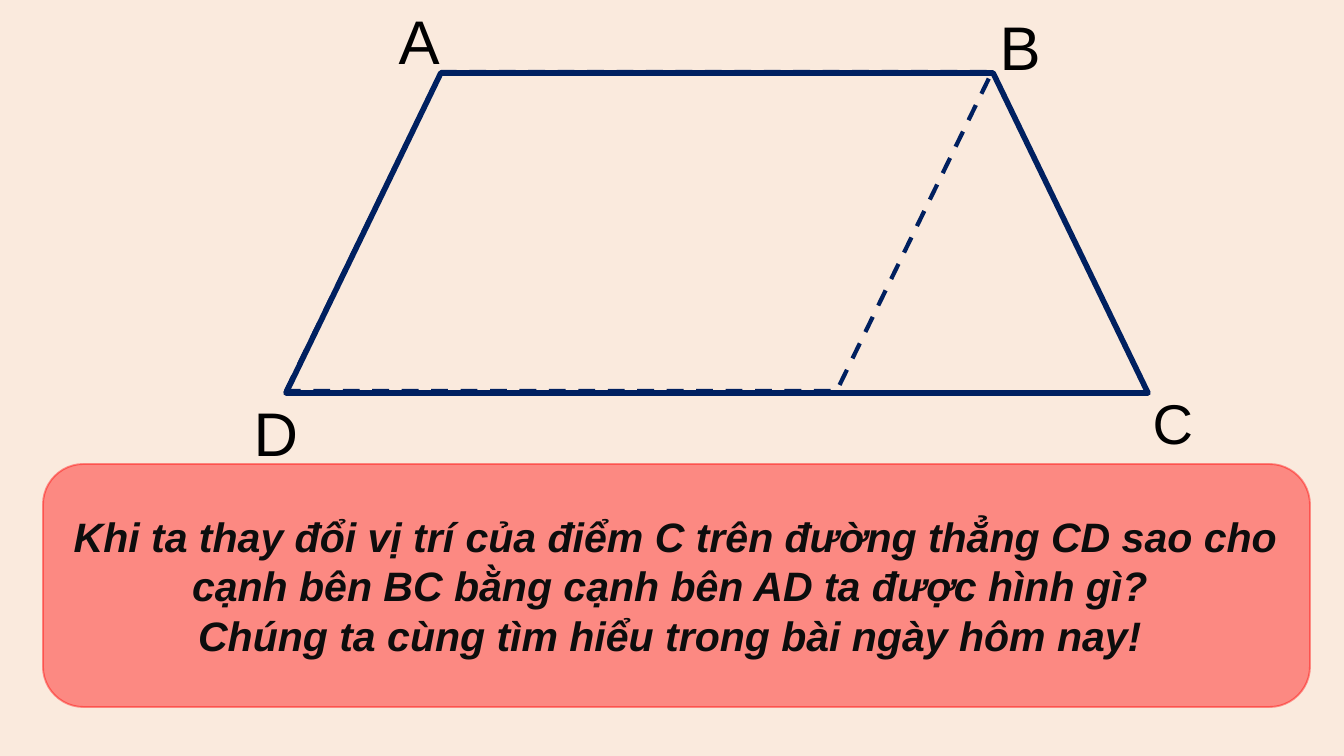
from lxml import etree
from pptx import Presentation
from pptx import util as u
from pptx.dml.color import RGBColor
from pptx.enum import dml, shapes, text
from pptx.oxml.ns import qn

SCALE = 914400 / 67.2  # EMU in one px
WIDTH, HEIGHT = 1344, 756
NAVY, RED, BLACK, INK, CREAM = "002060", "FF0000", "000000", "0D0D0D", "FAEADD"
QUESTION = [
    "Khi ta thay đổi vị trí của điểm C trên đường thẳng CD sao cho "
    "cạnh bên BC bằng cạnh bên AD ta được hình gì? ",
    "Chúng ta cùng tìm hiểu trong bài ngày hôm nay! ",
]


def px(length):
    return u.Emu(round(length * SCALE))


def color(hex_string):
    return RGBColor.from_string(hex_string)


def paint(fill, hex_string, opacity=100):
    fill.solid()
    fill.fore_color.rgb = color(hex_string)
    if opacity < 100:
        tint = fill._xPr.find(qn("a:solidFill"))[0]
        etree.SubElement(tint, qn("a:alpha"), val=str(opacity * 1000))


def format_font(paragraph, size, hex_string, bold=False, italic=False):
    for run in paragraph.runs:
        font = run.font
        font.name, font.size = "Arial", u.Pt(size)
        font.bold, font.italic = bold, italic
        font.color.rgb = color(hex_string)


def add_outline(parent, kind, box, slant, width, dash=None):
    shape = parent.add_shape(kind, *map(px, box))
    shape.shadow.inherit = False
    shape.adjustments[0] = slant
    shape.fill.background()
    paint(shape.line.fill, NAVY)
    shape.line.width = u.Pt(width)
    if dash:
        shape.line.dash_style = dash
    etree.SubElement(shape.line._ln, qn("a:round"))


def add_vertex(parent, letter, box, size):
    label = parent.add_textbox(*map(px, box))
    frame = label.text_frame
    frame.text = letter
    frame.word_wrap = False
    frame.auto_size = text.MSO_AUTO_SIZE.SHAPE_TO_FIT_TEXT
    format_font(frame.paragraphs[0], size, BLACK)


def add_figure(slide, left, top, width, height):
    # Dashed parallelogram behind the trapezoid
    add_outline(slide.shapes, shapes.MSO_SHAPE.PARALLELOGRAM,
                (left, top - 1, 706, height - 1), 0.487, 4.5, dml.MSO_LINE.DASH)
    # Trapezoid ABCD with its vertex letters
    group = slide.shapes.add_group_shape().shapes
    add_outline(group, shapes.MSO_SHAPE.TRAPEZOID,
                (left, top, width, height), 0.484, 6)
    right, bottom = left + width, top + height
    add_vertex(group, "D", (left - 39, bottom - 1, 58, 81), 66)
    add_vertex(group, "C", (right - 2, bottom - 8, 54, 75), 60)
    add_vertex(group, "B", (right - 155, top - 67, 55, 81), 66)
    add_vertex(group, "A", (left + 106, top - 73, 55, 81), 66)


def add_question(slide, left, top, width, height):
    panel = slide.shapes.add_shape(shapes.MSO_SHAPE.ROUNDED_RECTANGLE,
                                   *map(px, (left, top, width, height)))
    panel.shadow.inherit = False
    paint(panel.fill, RED, 41)
    paint(panel.line.fill, RED, 40)
    panel.line.width = u.Pt(2)
    frame = panel.text_frame
    frame.word_wrap = True
    frame.vertical_anchor = text.MSO_ANCHOR.MIDDLE
    frame.text = "\n".join(QUESTION)
    for paragraph in frame.paragraphs:
        paragraph.alignment = text.PP_ALIGN.CENTER
        format_font(paragraph, 44, INK, bold=True, italic=True)


def main():
    presentation = Presentation()
    presentation.slide_width, presentation.slide_height = px(WIDTH), px(HEIGHT)
    slide = presentation.slides.add_slide(presentation.slide_layouts[6])
    paint(slide.background.fill, CREAM)
    add_figure(slide, 286, 73, 862, 320)
    add_question(slide, 43, 464, 1267, 243)
    presentation.save("out.pptx")


if __name__ == "__main__":
    main()
